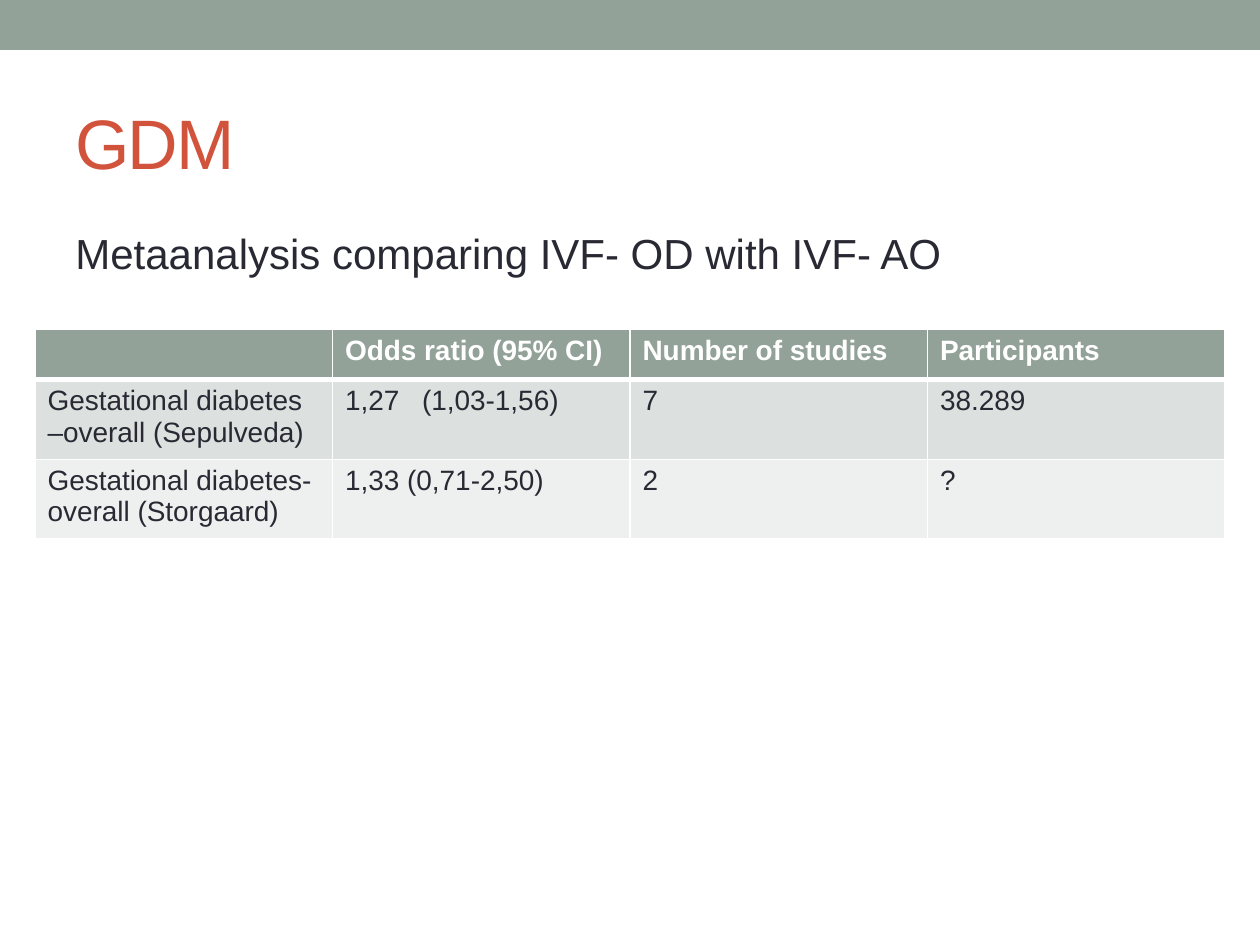
from dataclasses import dataclass

from lxml.etree import SubElement
from pptx import Presentation
from pptx.dml.color import RGBColor
from pptx.enum.shapes import MSO_SHAPE
from pptx.enum.text import MSO_ANCHOR
from pptx.oxml.ns import qn
from pptx.util import Pt

PX = 914400 // 126


@dataclass(frozen=True)
class Theme:
    font: str = "Arial"
    sage: str = "93A299"
    red: str = "D2533C"
    ink: str = "292934"
    white: str = "FFFFFF"
    bands: tuple = ("DCE0DE", "EEF0EF")
    title_size: int = 40
    body_size: int = 24
    table_size: int = 16


theme = Theme()


def style_text(frame, text, size, color, bold=False):
    frame.text = text
    frame.word_wrap = True
    for span in frame.paragraphs[0].runs:
        span.font.name = theme.font
        span.font.size = Pt(size)
        span.font.bold = bold
        span.font.color.rgb = RGBColor.from_string(color)


def add_border(cell, side, points):
    line = SubElement(cell._tc.get_or_add_tcPr(), qn(f"a:ln{side}"), w=str(Pt(points)))
    fill = SubElement(line, qn("a:solidFill"))
    SubElement(fill, qn("a:srgbClr"), val=theme.white)


deck = Presentation()
deck.slide_width = 1260 * PX
deck.slide_height = 945 * PX
slide = deck.slides.add_slide(deck.slide_layouts[6])

# Top band
band = slide.shapes.add_shape(MSO_SHAPE.RECTANGLE, 0, 0, 1260 * PX, 50 * PX)
band.shadow.inherit = False
band.fill.solid()
band.fill.fore_color.rgb = RGBColor.from_string(theme.sage)
band.line.fill.background()

# Title and subtitle
title = slide.shapes.add_textbox(63 * PX, 73 * PX, 1134 * PX, 136 * PX)
style_text(title.text_frame, "GDM", theme.title_size, theme.red)
title.text_frame.vertical_anchor = MSO_ANCHOR.MIDDLE
title.text_frame.paragraphs[0].runs[0].font._element.set("spc", "-100")

body = slide.shapes.add_textbox(63 * PX, 221 * PX, 1134 * PX, 672 * PX)
style_text(body.text_frame, "Metaanalysis comparing IVF- OD with IVF- AO",
           theme.body_size, theme.ink)
body.text_frame.paragraphs[0].space_before = Pt(theme.body_size * 0.2)

# Results table
rows = [
    ["", "Odds ratio (95% CI)", "Number of studies", "Participants"],
    ["Gestational diabetes –overall (Sepulveda)", "1,27\t(1,03-1,56)", "7", "38.289"],
    ["Gestational diabetes- overall (Storgaard)", "1,33 (0,71-2,50)", "2", "?"],
]
row_heights = [50, 75, 74]
frame = slide.shapes.add_table(len(rows), len(rows[0]), 35 * PX, 329 * PX,
                               1190 * PX, sum(row_heights) * PX)
table = frame.table

for row_index, (texts, height) in enumerate(zip(rows, row_heights)):
    table.rows[row_index].height = height * PX
    header = row_index == 0
    fill_color = theme.sage if header else theme.bands[row_index - 1]
    for column_index, text in enumerate(texts):
        cell = table.cell(row_index, column_index)
        style_text(cell.text_frame, text, theme.table_size,
                   theme.white if header else theme.ink, bold=header)
        for side in "LRTB":
            thick = (header and side == "B") or (row_index == 1 and side == "T")
            add_border(cell, side, 3 if thick else 1)
        cell.fill.solid()
        cell.fill.fore_color.rgb = RGBColor.from_string(fill_color)
        if "\t" in text:
            properties = cell.text_frame.paragraphs[0]._p.get_or_add_pPr()
            stops = SubElement(properties, qn("a:tabLst"))
            SubElement(stops, qn("a:tab"), pos=str(77 * PX), algn="l")

deck.save("out.pptx")
